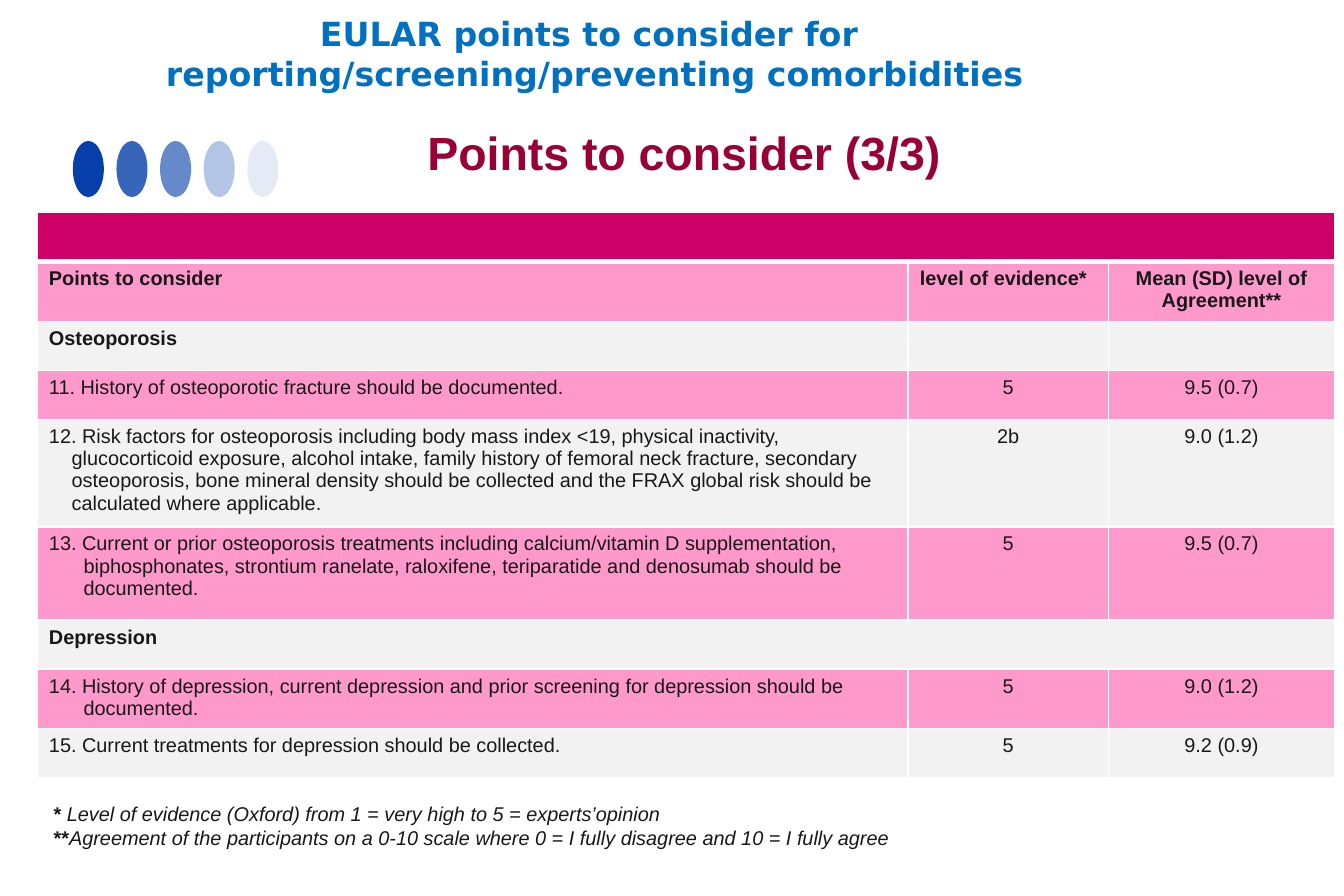
from lxml import etree
from pptx import Presentation
from pptx.dml.color import RGBColor
from pptx.enum.shapes import MSO_SHAPE as Shape
from pptx.enum.text import MSO_ANCHOR as Anchor, MSO_AUTO_SIZE as AutoSize, PP_ALIGN as Align
from pptx.oxml import parse_xml
from pptx.oxml.ns import nsdecls, qn
from pptx.util import Inches, Pt

BLUE = RGBColor(0x00, 0x70, 0xC0)
NAVY = RGBColor(0x06, 0x3F, 0xA9)
WINE = RGBColor(0x99, 0x00, 0x33)
MAGENTA = RGBColor(0xCC, 0x00, 0x66)
PINK = RGBColor(0xFF, 0x99, 0xCC)
GREY = RGBColor(0xF2, 0xF2, 0xF2)
INK = RGBColor(0x18, 0x18, 0x18)
WHITE = RGBColor(0xFF, 0xFF, 0xFF)

TITLE = ["EULAR points to consider for ", "reporting/screening/preventing comorbidities"]
HEADINGS = ["Points to consider", "level of evidence*", "Mean (SD) level of\nAgreement**"]
COLUMNS = [7.29, 1.68, 1.89]
ROWS = [
    (0.41, 0, []),
    (0.49, 0, HEADINGS),
    (0.41, 0, ["Osteoporosis"]),
    (0.41, 0.19, ["11. History of osteoporotic fracture should be documented.", "5", "9.5 (0.7)"]),
    (0.9, 0.19, ["12. Risk factors for osteoporosis including body mass index <19, physical "
                 "inactivity, glucocorticoid exposure, alcohol intake, family history of femoral "
                 "neck fracture, secondary osteoporosis, bone mineral density should be collected "
                 "and the FRAX global risk should be calculated where applicable.",
                 "2b", "9.0 (1.2)"]),
    (0.78, 0.29, ["13. Current or prior osteoporosis treatments including calcium/vitamin D "
                  "supplementation, biphosphonates, strontium ranelate, raloxifene, teriparatide "
                  "and denosumab should be documented.", "5", "9.5 (0.7)"]),
    (0.41, 0, ["Depression"]),
    (0.49, 0.29, ["14. History of depression, current depression and prior screening for "
                  "depression should be documented.", "5", "9.0 (1.2)"]),
    (0.41, 0.29, ["15. Current treatments for depression should be collected.", "5", "9.2 (0.9)"]),
]
NOTES = [
    ("* ", "Level of evidence (Oxford) from 1 = very high to 5 = experts’opinion"),
    ("**", "Agreement of the participants on a 0-10 scale where 0 = I fully disagree "
           "and 10 = I fully agree"),
]


def add_span(para, text, size, color, bold=False, italic=False, font="Arial"):
    span = para.add_run()
    span.text = text
    span.font.name = font
    span.font.size = Pt(size)
    span.font.bold = bold
    span.font.italic = italic
    span.font.color.rgb = color


def next_para(frame, index):
    return frame.add_paragraph() if index else frame.paragraphs[0]


def add_box(page, left, top, width, height):
    box = page.shapes.add_textbox(Inches(left), Inches(top), Inches(width), Inches(height))
    box.text_frame.word_wrap = True
    return box.text_frame


def fill_title(page, left, top, width, height):
    title = page.shapes.title
    title.left, title.top = Inches(left), Inches(top)
    title.width, title.height = Inches(width), Inches(height)
    frame = title.text_frame
    frame.word_wrap = True
    frame.auto_size = AutoSize.NONE
    frame.vertical_anchor = Anchor.TOP
    for index, line in enumerate(TITLE):
        para = next_para(frame, index)
        para.alignment = Align.CENTER
        add_span(para, line, 20, BLUE, bold=True, font="DejaVu Sans")


def add_subtitle(page, left, top, width, height):
    para = add_box(page, left, top, width, height).paragraphs[0]
    add_span(para, "Points to consider (3/3)", 28, WINE, bold=True)


def add_dots(page, left, top, width, height):
    dot_width = 0.26
    alphas = [100, 80, 61, 30, 10]
    step = (width - dot_width) / (len(alphas) - 1)
    for index, alpha in enumerate(alphas):
        dot = page.shapes.add_shape(Shape.OVAL, Inches(left + index * step), Inches(top),
                                    Inches(dot_width), Inches(height))
        dot.shadow.inherit = False
        dot.line.fill.background()
        dot.fill.solid()
        dot.fill.fore_color.rgb = NAVY
        color = dot.fill._xPr.find(".//" + qn("a:srgbClr"))
        etree.SubElement(color, qn("a:alpha")).set("val", str(alpha * 1000))


def style_cell(cell, color, top_width, bottom_width):
    properties = cell._tc.get_or_add_tcPr()
    widths = {"lnL": 1, "lnR": 1, "lnT": top_width, "lnB": bottom_width}
    for side, width in widths.items():
        properties.append(parse_xml(
            f'<a:{side} {nsdecls("a")} w="{Pt(width)}"><a:solidFill>'
            f'<a:srgbClr val="{WHITE}"/></a:solidFill></a:{side}>'))
    cell.fill.solid()
    cell.fill.fore_color.rgb = color


def write_cell(cell, text, bold, centred, indent):
    for index, line in enumerate(text.split("\n")):
        para = next_para(cell.text_frame, index)
        if centred:
            para.alignment = Align.CENTER
        if indent:
            properties = para._p.get_or_add_pPr()
            properties.set("marL", str(Inches(indent)))
            properties.set("indent", str(-Inches(indent)))
        add_span(para, line, 12, INK, bold=bold)


def add_points(page, left, top, width, height):
    table = page.shapes.add_table(len(ROWS), len(COLUMNS), Inches(left), Inches(top),
                                  Inches(width), Inches(height)).table
    for column, share in zip(table.columns, COLUMNS):
        column.width = Inches(share)
    for r, (row_height, indent, texts) in enumerate(ROWS):
        table.rows[r].height = Inches(row_height)
        color = MAGENTA if r == 0 else PINK if r % 2 else GREY
        for c in range(len(COLUMNS)):
            cell = table.cell(r, c)
            style_cell(cell, color, 3 if r == 1 else 1, 3 if r == 0 else 1)
            if c < len(texts):
                centred = c == 2 or (c == 1 and texts is not HEADINGS)
                write_cell(cell, texts[c], not indent, centred, 0 if c else indent)
        if not texts or texts[0] == "Depression":
            table.cell(r, 0).merge(table.cell(r, len(COLUMNS) - 1))


def add_notes(page, left, top, width, height):
    frame = add_box(page, left, top, width, height)
    for index, (mark, note) in enumerate(NOTES):
        para = next_para(frame, index)
        add_span(para, mark, 12, INK, bold=True)
        add_span(para, note, 12, INK, italic=True)


def main():
    deck = Presentation()
    deck.slide_width, deck.slide_height = Inches(11.25), Inches(7.5)
    page = deck.slides.add_slide(deck.slide_layouts[5])
    add_dots(page, 0.61, 1.18, 1.72, 0.47)
    fill_title(page, 0.06, 0.06, 9.84, 0.77)
    add_subtitle(page, 3.48, 0.99, 4.53, 0.57)
    add_points(page, 0.31, 1.78, sum(COLUMNS), sum(row[0] for row in ROWS))
    add_notes(page, 0.35, 6.66, 9.12, 0.5)
    deck.save("out.pptx")


if __name__ == "__main__":
    main()
